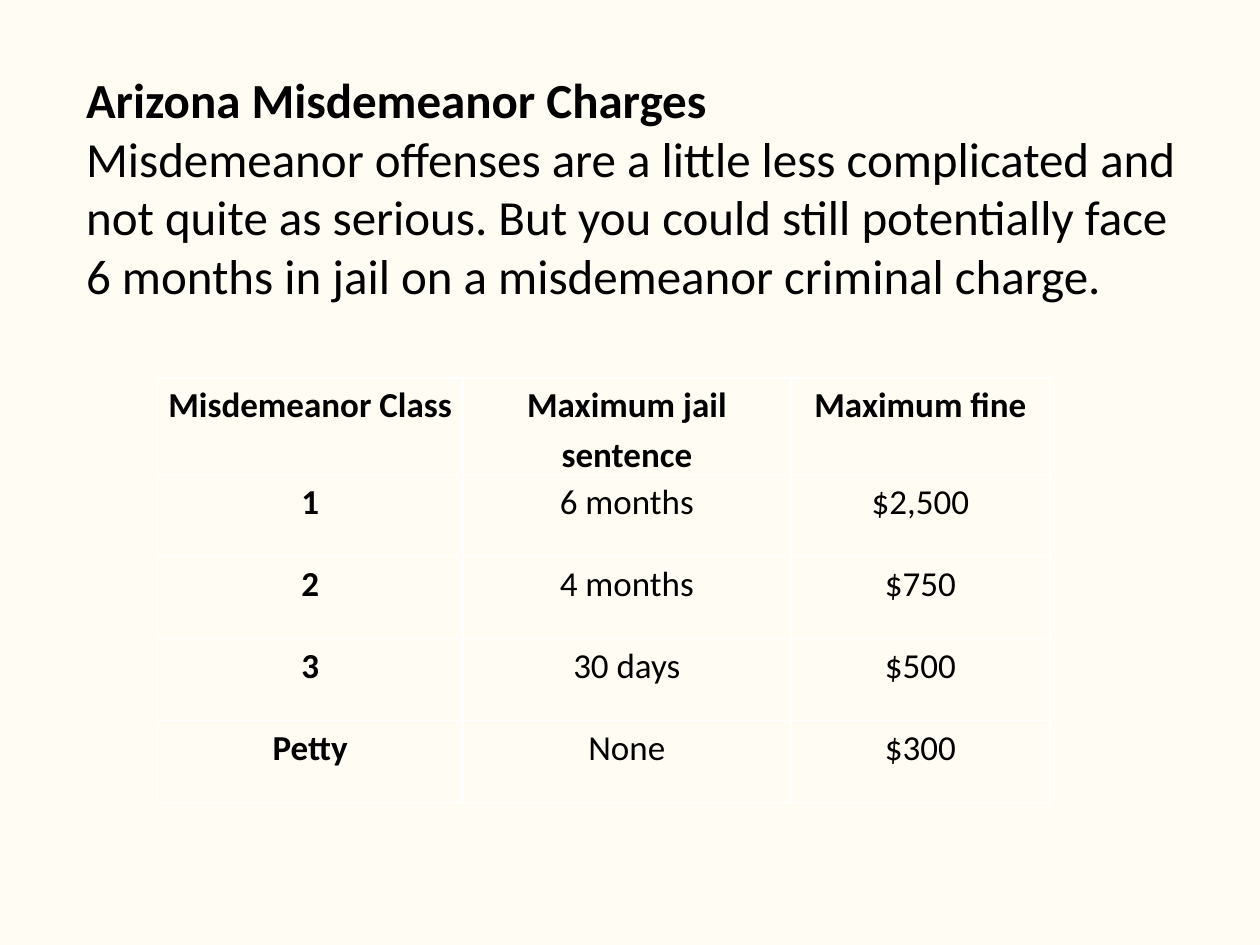
from pptx import Presentation
from pptx.dml.color import RGBColor
from pptx.enum.text import MSO_ANCHOR, MSO_AUTO_SIZE, PP_ALIGN
from pptx.util import Pt

BLACK = RGBColor(0x00, 0x00, 0x00)
CREAM = RGBColor(0xFF, 0xFC, 0xF4)
FONT = "Calibri"

INTRO = [
    ("Arizona Misdemeanor Charges", True),
    ("Misdemeanor offenses are a little less complicated and not quite as "
     "serious. But you could still potentially face 6 months in jail on a "
     "misdemeanor criminal charge.", False),
]
ROWS = [
    ("Misdemeanor Class", "Maximum jail sentence", "Maximum fine"),
    ("1", "6 months", "$2,500"),
    ("2", "4 months", "$750"),
    ("3", "30 days", "$500"),
    ("Petty", "None", "$300"),
]
WIDTHS = (174.5, 187.5, 148)


def add_run(para, text, size, bold):
    run = para.add_run()
    run.text = text
    font = run.font
    font.name = FONT
    font.size = Pt(size)
    font.bold = bold
    font.color.rgb = BLACK


def place_intro(slide, left, top, width, height):
    title = slide.shapes.title
    title.left, title.top = Pt(left), Pt(top)
    title.width, title.height = Pt(width), Pt(height)
    frame = title.text_frame
    frame.word_wrap = True
    frame.auto_size = MSO_AUTO_SIZE.SHAPE_TO_FIT_TEXT
    frame.vertical_anchor = MSO_ANCHOR.TOP
    for i, (text, bold) in enumerate(INTRO):
        para = frame.add_paragraph() if i else frame.paragraphs[0]
        para.alignment = PP_ALIGN.LEFT
        para.space_before = Pt(0)
        add_run(para, text, 28, bold)


def fill_cell(cell, text, bold):
    cell.fill.background()
    cell.margin_left = cell.margin_right = Pt(0)
    cell.margin_top = cell.margin_bottom = Pt(0)
    para = cell.text_frame.paragraphs[0]
    para.alignment = PP_ALIGN.CENTER
    para.line_spacing = 1.15
    add_run(para, text, 20, bold)


def place_table(slide, left, top, width, height):
    frame = slide.shapes.add_table(
        len(ROWS), len(WIDTHS), Pt(left), Pt(top), Pt(width), Pt(height))
    table = frame.table
    table.first_row = table.horz_banding = False
    for col, size in zip(table.columns, WIDTHS):
        col.width = Pt(size)
    for r, row in enumerate(ROWS):
        for c, text in enumerate(row):
            fill_cell(table.cell(r, c), text, r == 0 or c == 0)


def main():
    deck = Presentation()
    deck.slide_width, deck.slide_height = Pt(720), Pt(540)
    slide = deck.slides.add_slide(deck.slide_layouts[5])
    back = slide.background.fill
    back.solid()
    back.fore_color.rgb = CREAM
    place_intro(slide, 42, 36, 642, 143)
    place_table(slide, 90, 216, sum(WIDTHS), 46.8 * len(ROWS))
    deck.save("out.pptx")


if __name__ == "__main__":
    main()
